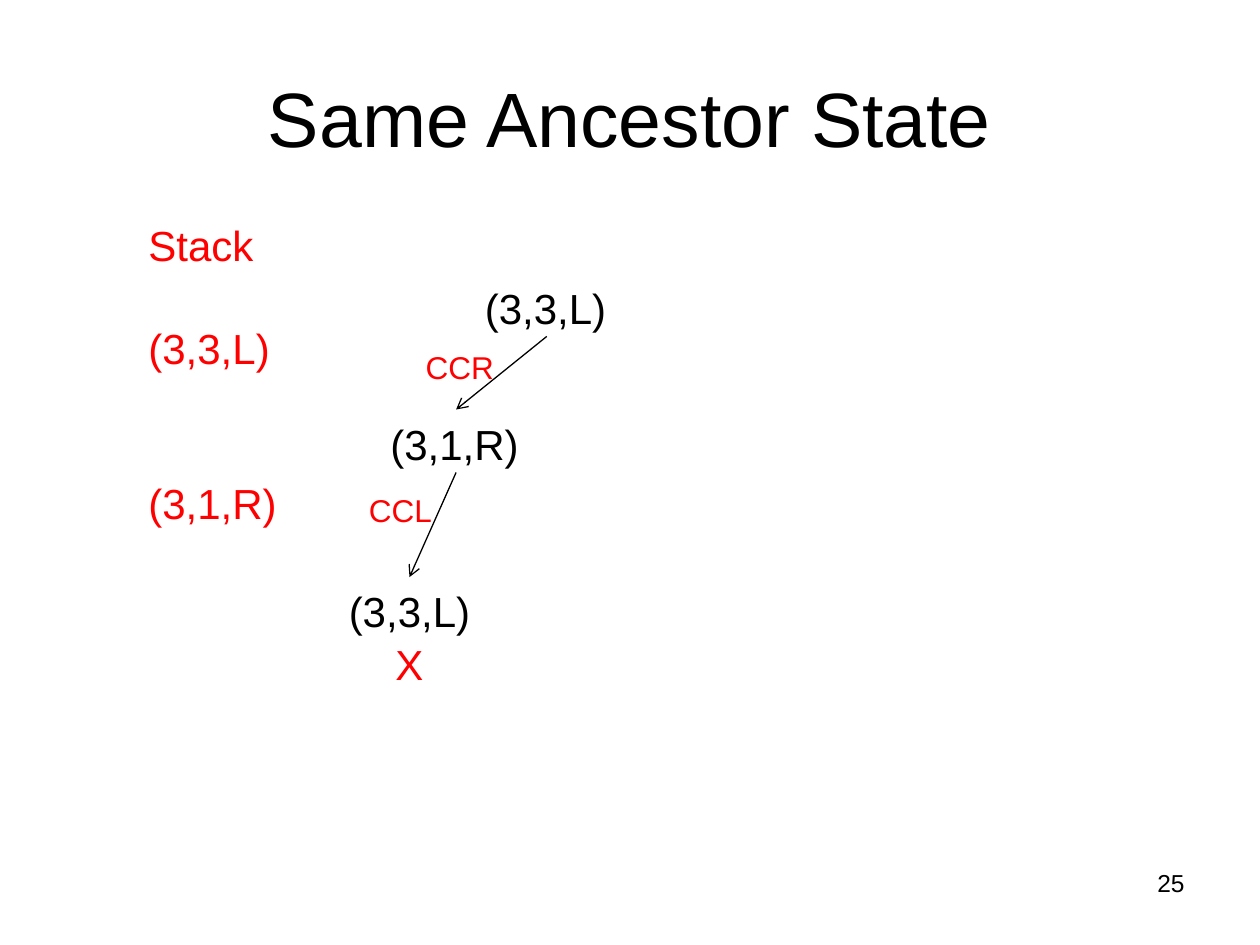
from lxml import etree
from pptx import Presentation
from pptx.dml.color import RGBColor
from pptx.enum import shapes, text
from pptx.oxml import ns
from pptx.util import Inches, Pt

COLORS = {"ink": "000000", "accent": "FF0000", "paper": "FFFFFF"}
FONT = "Arial"
LINE_SPACING = 1.05
STACK_ROW = 29  # height of one row of the stack, in points


def format_text(paragraph, size, color):
    for run in paragraph.runs:
        run.font.name = FONT
        run.font.size = Pt(size)
        run.font.color.rgb = RGBColor.from_string(COLORS[color])


def add_label(slide, box, lines, size=24, color="ink", wrap=False):
    label = slide.shapes.add_textbox(*map(Inches, box))
    frame = label.text_frame
    frame.word_wrap = wrap
    frame.auto_size = text.MSO_AUTO_SIZE.SHAPE_TO_FIT_TEXT
    frame.text = "\n".join(lines)
    for paragraph in frame.paragraphs:
        paragraph.line_spacing = LINE_SPACING
        format_text(paragraph, size, color)
    return frame.paragraphs


def add_arrow(slide, start, end):
    arrow = slide.shapes.add_connector(
        shapes.MSO_CONNECTOR.STRAIGHT, *map(Inches, start + end))
    arrow.line.width = Pt(0.75)
    arrow.line.color.rgb = RGBColor.from_string(COLORS["ink"])
    etree.SubElement(arrow.line._get_or_add_ln(), ns.qn("a:tailEnd"), type="arrow")
    etree.SubElement(arrow._element.spPr, ns.qn("a:effectLst"))


def add_title(slide, wording):
    title = slide.shapes.title
    title.left, title.top, title.width, title.height = map(
        Inches, (0.5, 0.3, 9, 1.25))
    title.text_frame.text = wording
    title.text_frame.vertical_anchor = text.MSO_ANCHOR.MIDDLE
    heading = title.text_frame.paragraphs[0]
    heading.alignment = text.PP_ALIGN.CENTER
    format_text(heading, 44, "ink")


def main():
    deck = Presentation()
    deck.slide_width, deck.slide_height = Inches(10), Inches(7.5)
    slide = deck.slides.add_slide(deck.slide_layouts[5])
    slide.background.fill.solid()
    slide.background.fill.fore_color.rgb = RGBColor.from_string(COLORS["paper"])

    # Title and page number
    add_title(slide, "Same Ancestor State")
    page_number, = add_label(slide, (7.17, 6.83, 2.33, 0.52), ["25"], 14, wrap=True)
    page_number.alignment = text.PP_ALIGN.RIGHT

    # Search tree: states, with the repeated one crossed out
    add_label(slide, (3.75, 2.17, 1.17, 0.5), ["(3,3,L)"])
    add_label(slide, (3, 3.25, 1.23, 0.5), ["(3,1,R)"])
    repeated_state, cross = add_label(
        slide, (2.67, 4.58, 1.17, 0.91), ["(3,3,L)", "X"])
    cross.alignment = text.PP_ALIGN.CENTER
    format_text(cross, 24, "accent")

    # Moves between the states
    add_arrow(slide, (4.34, 2.67), (3.62, 3.25))
    add_arrow(slide, (3.62, 3.75), (3.25, 4.58))

    # Stack of visited states
    heading, first_state, second_state = add_label(
        slide, (1.08, 1.67, 1.23, 2.52), ["Stack", "(3,3,L)", "(3,1,R)"],
        color="accent")
    first_state.space_before = Pt(STACK_ROW)
    second_state.space_before = Pt(2 * STACK_ROW)

    # Move names
    add_label(slide, (3.28, 2.7, 0.75, 0.4), ["CCR"], 18, "accent")
    add_label(slide, (2.83, 3.83, 1.01, 0.4), ["CCL"], 18, "accent", wrap=True)

    deck.save("out.pptx")


if __name__ == "__main__":
    main()
